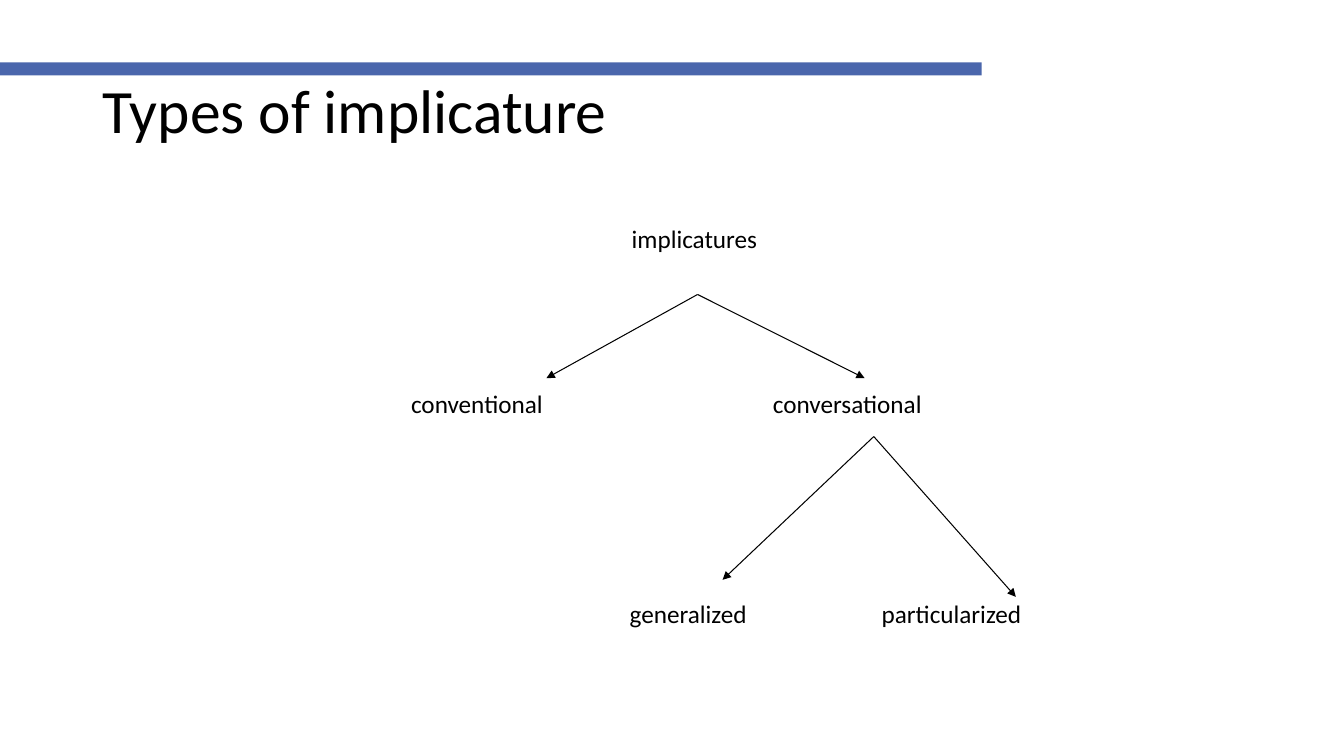
"""Build a slide with a tree of the types of implicature."""
from dataclasses import dataclass
from typing import Any

from lxml.etree import SubElement as Sub
from pptx import Presentation
from pptx.dml.color import RGBColor as Rgb
from pptx.enum.shapes import MSO_CONNECTOR as Conn, MSO_SHAPE as Kind
from pptx.enum.text import MSO_ANCHOR as Anchor, MSO_AUTO_SIZE as Fit
from pptx.oxml.ns import qn
from pptx.slide import Slide
from pptx.util import Cm, Pt


@dataclass(frozen=True)
class Theme:
    font: str = "Calibri"
    ink: Rgb = Rgb(0, 0, 0)
    bar: Rgb = Rgb(0x4A, 0x66, 0xAC)
    head: Pt = Pt(44)
    body: Pt = Pt(18)
    line: Pt = Pt(0.75)


@dataclass(frozen=True)
class Label:
    text: str
    left: float
    top: float
    width: float
    height: float = 1.02


@dataclass(frozen=True)
class Fork:
    top: tuple[float, float]
    ends: tuple[tuple[float, float], ...]


THEME = Theme()
TITLE = Label("Types of implicature", 2.34, 1.02, 29.21, 3.68)
LABELS = (
    Label("implicatures", 15.67, 5.51, 3.71),
    Label("conventional", 10.11, 9.65, 3.86),
    Label("conversational", 19.23, 9.65, 4.29),
    Label("generalized", 15.62, 14.94, 3.51),
    Label("particularized", 21.97, 14.94, 4.06),
)
FORKS = (
    Fork((17.58, 7.42), ((13.77, 9.53), (21.79, 9.53))),
    Fork((22.02, 11), ((18.21, 14.61), (25.6, 15.04))),
)
HEAD = {"vertical_anchor": Anchor.MIDDLE, "word_wrap": True}
BODY = {"auto_size": Fit.SHAPE_TO_FIT_TEXT, "word_wrap": False}


def style(item: Any, form: dict[str, Any]) -> None:
    """Set each format value on the item."""
    for name, value in form.items():
        setattr(item, name, value)


def draw_bar(slide: Slide) -> None:
    """Draw the band above the title."""
    bar = slide.shapes.add_shape(Kind.RECTANGLE, 0, Cm(1.57), Cm(24.74), Cm(0.33))
    bar.shadow.inherit = False
    bar.fill.solid()
    bar.fill.fore_color.rgb = THEME.bar
    bar.line.fill.background()


def draw_text(slide: Slide, label: Label, size: Pt, form: dict[str, Any],
              space: float = 1.0) -> None:
    """Draw one label in a text box."""
    area = map(Cm, (label.left, label.top, label.width, label.height))
    frame = slide.shapes.add_textbox(*area).text_frame
    style(frame, form)
    para = frame.paragraphs[0]
    para.line_spacing = space
    run = para.add_run()
    run.text = label.text
    style(run.font, {"name": THEME.font, "size": size})
    run.font.color.rgb = THEME.ink


def draw_fork(slide: Slide, fork: Fork) -> None:
    """Draw an arrow from the top of the fork to each end."""
    for end in fork.ends:
        arrow = slide.shapes.add_connector(Conn.STRAIGHT, *map(Cm, fork.top + end))
        arrow.line.width = THEME.line
        arrow.line.color.rgb = THEME.ink
        Sub(arrow.line._get_or_add_ln(), qn("a:tailEnd"), type="triangle")
        Sub(arrow._element.spPr, qn("a:effectLst"))


def main() -> None:
    """Build and save the slide."""
    deck = Presentation()
    style(deck, {"slide_width": Cm(33.87), "slide_height": Cm(19.05)})
    slide = deck.slides.add_slide(deck.slide_layouts[6])
    draw_bar(slide)
    draw_text(slide, TITLE, THEME.head, HEAD, 0.9)
    for label in LABELS:
        draw_text(slide, label, THEME.body, BODY)
    for fork in FORKS:
        draw_fork(slide, fork)
    deck.save("out.pptx")


if __name__ == "__main__":
    main()
